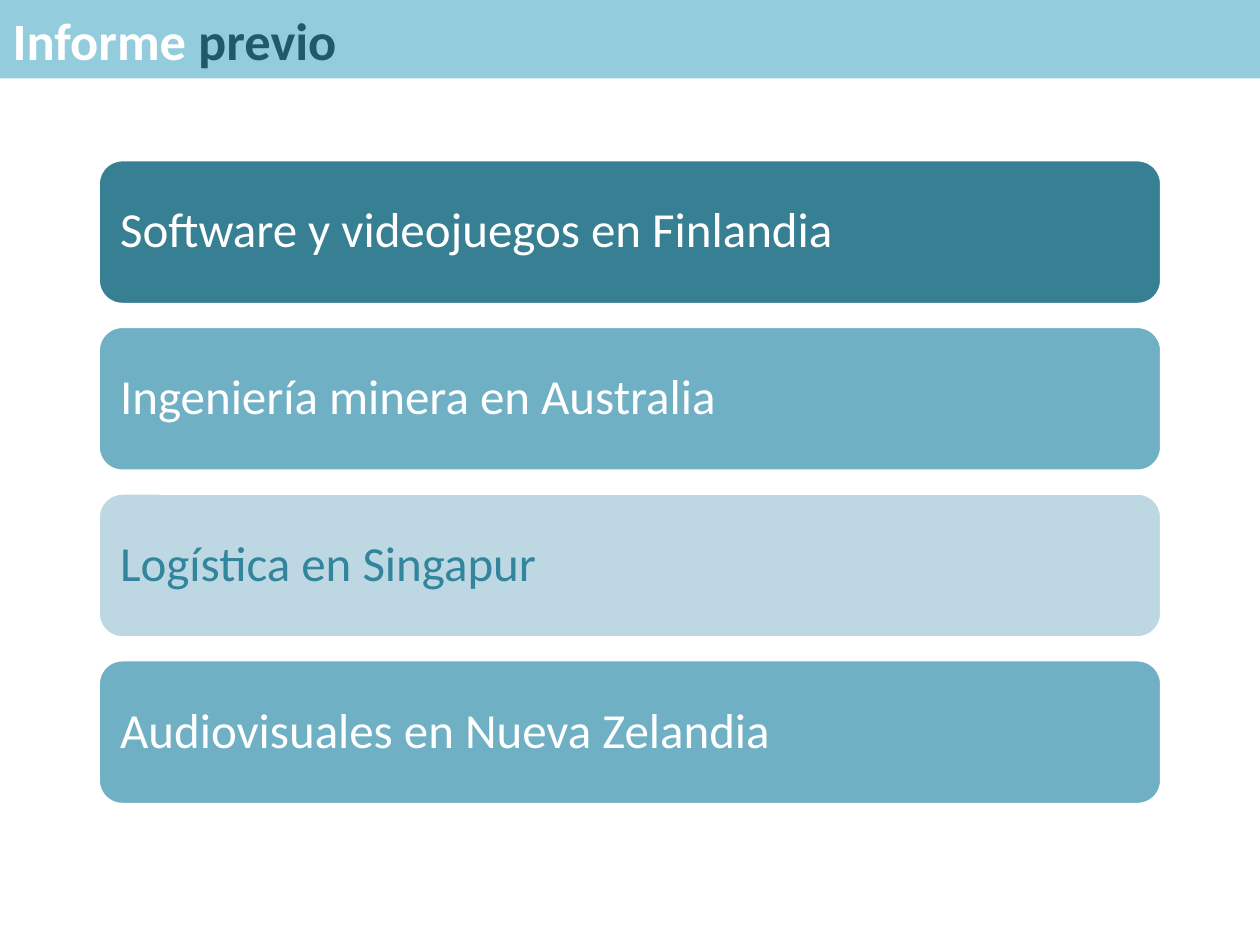
"""Build the "Informe previo" slide with its four sector cards."""

from pptx import Presentation
from pptx.dml.color import RGBColor
from pptx.enum.shapes import MSO_SHAPE
from pptx.enum.text import MSO_ANCHOR, MSO_AUTO_SIZE, PP_ALIGN
from pptx.util import Cm, Pt

WHITE = "FFFFFF"
TEAL = "31859C"
CARDS = [
    ("Software y videojuegos en Finlandia", "377F92", WHITE),
    ("Ingeniería minera en Australia", "70B0C5", WHITE),
    ("Logística en Singapur", "BED8E3", TEAL),
    ("Audiovisuales en Nueva Zelandia", "70B0C5", WHITE),
]
CARD_TOP = 3.22
CARD_PITCH = 3.36


def color(value):
    return RGBColor.from_string(value)


class SlideBuilder:
    def __init__(self, slide, font_name="Calibri"):
        self.slide = slide
        self.font_name = font_name

    def fill(self, shape, value):
        shape.fill.solid()
        shape.fill.fore_color.rgb = color(value)

    def format_paragraph(self, paragraph, size, bold=False):
        paragraph.alignment = PP_ALIGN.LEFT
        paragraph.font.name = self.font_name
        paragraph.font.size = Pt(size)
        paragraph.font.bold = bold

    def title_bar(self, parts, width, height, fill):
        title = self.slide.shapes.title
        title.left, title.top = Cm(0), Cm(0)
        title.width, title.height = width, height
        self.fill(title, fill)
        frame = title.text_frame
        frame.auto_size = MSO_AUTO_SIZE.NONE
        frame.vertical_anchor = MSO_ANCHOR.MIDDLE
        paragraph = frame.paragraphs[0]
        self.format_paragraph(paragraph, 30, bold=True)
        for text, text_color in parts:
            run = paragraph.add_run()
            run.text = text
            run.font.color.rgb = color(text_color)

    def card(self, text, top, fill, text_color):
        shape = self.slide.shapes.add_shape(
            MSO_SHAPE.ROUNDED_RECTANGLE, Cm(1.98), top, Cm(21.44), Cm(2.92)
        )
        shape.shadow.inherit = False
        self.fill(shape, fill)
        shape.line.color.rgb = color(WHITE)
        shape.line.width = Pt(2)
        frame = shape.text_frame
        frame.word_wrap = True
        frame.vertical_anchor = MSO_ANCHOR.MIDDLE
        frame.margin_left = frame.margin_right = Cm(0.3)
        paragraph = frame.paragraphs[0]
        paragraph.text = text
        paragraph.line_spacing = 0.9
        self.format_paragraph(paragraph, 28)
        paragraph.font.color.rgb = color(text_color)


def main():
    presentation = Presentation()
    presentation.slide_width, presentation.slide_height = Cm(25.4), Cm(19.05)
    slide = presentation.slides.add_slide(presentation.slide_layouts[5])
    builder = SlideBuilder(slide)
    builder.title_bar(
        [("Informe ", WHITE), ("previo", "215968")],
        presentation.slide_width, Cm(1.58), "93CDDD",
    )
    for index, (text, fill, text_color) in enumerate(CARDS):
        builder.card(text, Cm(CARD_TOP + index * CARD_PITCH), fill, text_color)
    presentation.save("out.pptx")


if __name__ == "__main__":
    main()
